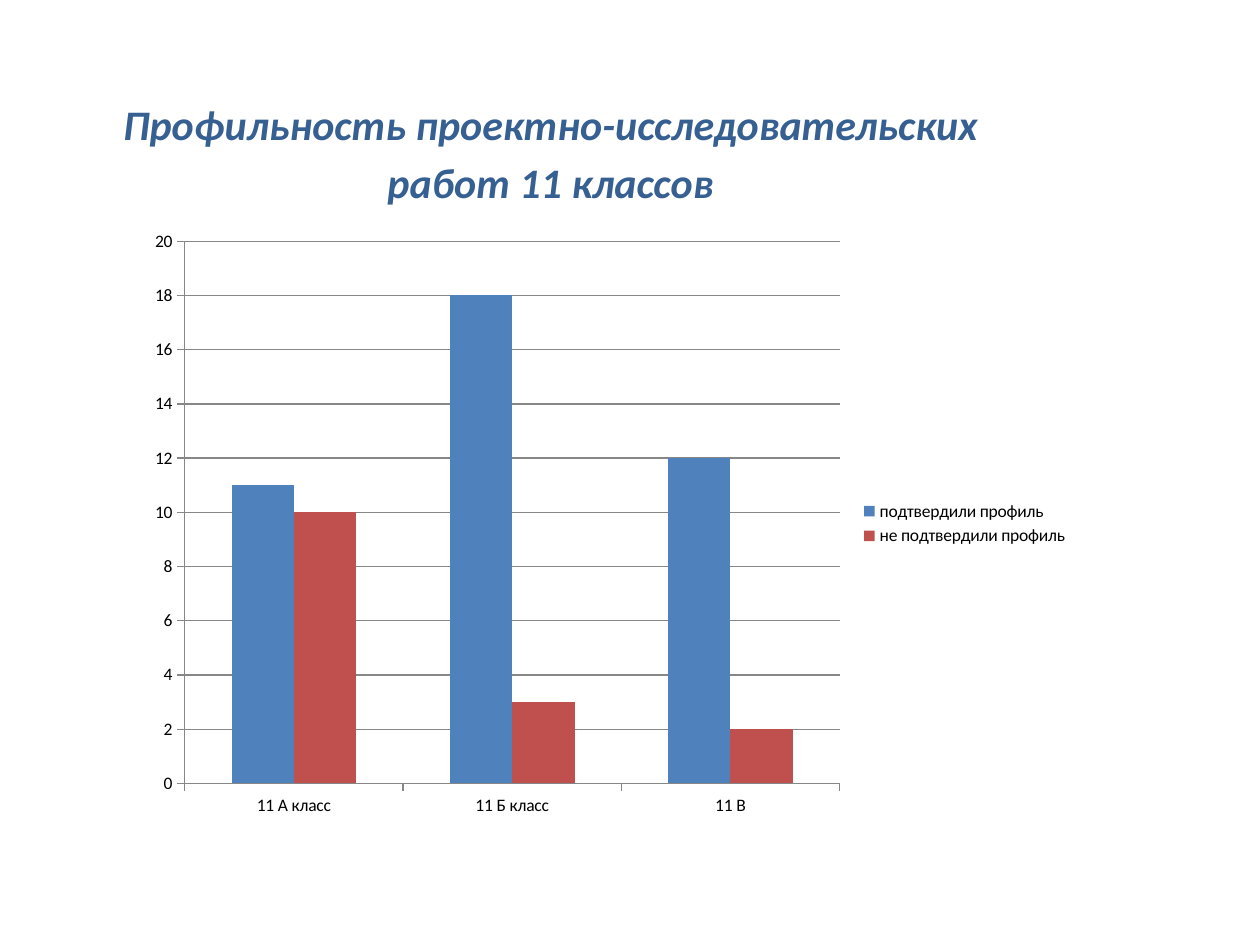
"""Build a slide comparing how project work matched the profile in grade 11 classes."""
import dataclasses
import typing

import pptx
import pptx.chart.data
import pptx.dml.color
import pptx.enum.chart
import pptx.enum.text
import pptx.util

Inches = pptx.util.Inches
Pt = pptx.util.Pt
RGB = pptx.dml.color.RGBColor


@dataclasses.dataclass(frozen=True)
class Theme:
    font: str = "Calibri"
    title_size: int = 24
    chart_size: int = 10
    title: RGB = RGB(0x37, 0x60, 0x92)
    text: RGB = RGB(0, 0, 0)
    line: RGB = RGB(0x87, 0x87, 0x87)


class Series(typing.NamedTuple):
    name: str
    values: tuple[int, ...]
    color: RGB


THEME = Theme()
CLASSES = ("11 А класс", "11 Б класс", "11 В")
SERIES = (
    Series("подтвердили профиль", (11, 18, 12), RGB(0x4F, 0x81, 0xBD)),
    Series("не подтвердили профиль", (10, 3, 2), RGB(0xC0, 0x50, 0x4D)),
)


def add_title(slide: pptx.slide.Slide, text: str) -> None:
    tf = slide.shapes.add_textbox(Inches(0.83), Inches(0.67), Inches(7.08), Inches(1)).text_frame
    tf.word_wrap = True
    tf.auto_size = pptx.enum.text.MSO_AUTO_SIZE.SHAPE_TO_FIT_TEXT
    p = tf.paragraphs[0]
    p.text = text
    p.alignment = pptx.enum.text.PP_ALIGN.CENTER
    p.line_spacing = 1.15
    p.space_after = Pt(10)
    font = p.runs[0].font
    font.name = THEME.font
    font.size = Pt(THEME.title_size)
    font.bold = font.italic = True
    font.color.rgb = THEME.title


def style_line(line: pptx.dml.line.LineFormat) -> None:
    line.color.rgb = THEME.line
    line.width = Pt(0.75)


def add_profile_chart(slide: pptx.slide.Slide) -> None:
    data = pptx.chart.data.CategoryChartData()
    data.categories = CLASSES
    for series in SERIES:
        data.add_series(series.name, series.values)
    chart = slide.shapes.add_chart(
        pptx.enum.chart.XL_CHART_TYPE.COLUMN_CLUSTERED,
        Inches(1.08), Inches(1.74), Inches(7.5), Inches(4.83), data,
    ).chart
    chart.has_title = False
    chart.font.name = THEME.font
    chart.font.size = Pt(THEME.chart_size)
    chart.font.color.rgb = THEME.text
    chart.has_legend = True
    chart.legend.position = pptx.enum.chart.XL_LEGEND_POSITION.RIGHT
    chart.legend.include_in_layout = False

    plot = chart.plots[0]
    plot.gap_width = 150
    plot.overlap = 0
    plot.vary_by_categories = False
    for bars, series in zip(plot.series, SERIES):
        bars.format.fill.solid()
        bars.format.fill.fore_color.rgb = series.color

    for axis in (chart.category_axis, chart.value_axis):
        axis.major_tick_mark = pptx.enum.chart.XL_TICK_MARK.OUTSIDE
        style_line(axis.format.line)
    axis = chart.value_axis
    axis.minimum_scale, axis.maximum_scale, axis.major_unit = 0, 20, 2
    axis.has_major_gridlines = True
    style_line(axis.major_gridlines.format.line)


def main() -> None:
    prs = pptx.Presentation()
    prs.slide_width, prs.slide_height = Inches(10), Inches(7.5)
    slide = prs.slides.add_slide(prs.slide_layouts[6])
    add_profile_chart(slide)
    add_title(slide, "Профильность проектно-исследовательских работ 11 классов")
    prs.save("out.pptx")


if __name__ == "__main__":
    main()
